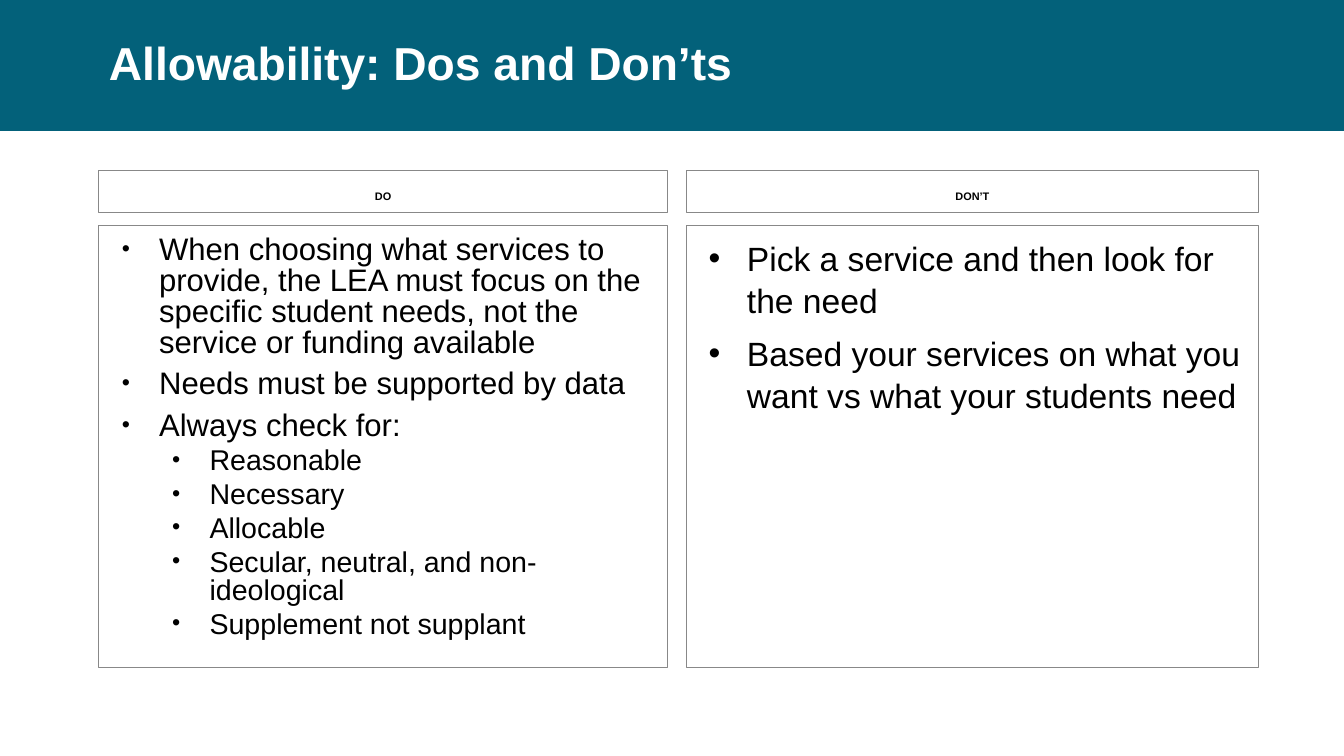
from dataclasses import dataclass

from lxml import etree
from pptx import Presentation
from pptx.dml.color import RGBColor
from pptx.enum.shapes import MSO_SHAPE
from pptx.enum.text import MSO_ANCHOR, MSO_AUTO_SIZE, PP_ALIGN
from pptx.oxml.ns import qn
from pptx.util import Inches, Pt

RECTANGLE = MSO_SHAPE.RECTANGLE
TOP, MIDDLE, BOTTOM = MSO_ANCHOR.TOP, MSO_ANCHOR.MIDDLE, MSO_ANCHOR.BOTTOM
LEFT, CENTER = PP_ALIGN.LEFT, PP_ALIGN.CENTER
NO_FIT = MSO_AUTO_SIZE.NONE
TITLE_ONLY = 5

SLIDE_WIDTH, SLIDE_HEIGHT = Inches(13.33), Inches(7.5)
COLUMN, ROW = SLIDE_WIDTH / 100, SLIDE_HEIGHT / 100
MARGIN = 7.35
BANNER_ROWS = 17.33
HEADING_ROWS = (22.53, 5.6)
LIST_ROWS = (29.87, 58.4)


@dataclass(frozen=True)
class Theme:
    font: str = "Arial"
    teal: RGBColor = RGBColor(0x03, 0x61, 0x7A)
    white: RGBColor = RGBColor(0xFF, 0xFF, 0xFF)
    black: RGBColor = RGBColor(0, 0, 0)
    border: RGBColor = RGBColor(0x88, 0x88, 0x88)
    title_size: float = 33
    heading_size: float = 7.8


THEME = Theme()


@dataclass(frozen=True)
class Level:
    size: float
    indent: float
    hanging: float
    spacing: float
    before: float
    bullet_percent: int


DO_LEVELS = (Level(22.2, 0.5, 0.37, 0.83, 7.5, 75),
             Level(20.4, 1, 0.37, 0.83, 3.8, 82))
DONT_LEVELS = (Level(24, 0.5, 0.38, 1.05, 7.5, 100),)

TOPICS = (
    ("DO", 7.35, 42.31, DO_LEVELS, (
        (0, "When choosing what services to provide, the LEA must focus on "
            "the specific student needs, not the service or funding available"),
        (0, "Needs must be supported by data"),
        (0, "Always check for:"),
        (1, "Reasonable"),
        (1, "Necessary"),
        (1, "Allocable"),
        (1, "Secular, neutral, and non-ideological"),
        (1, "Supplement not supplant"),
    )),
    ("DON’T", 51.09, 42.53, DONT_LEVELS, (
        (0, "Pick a service and then look for the need"),
        (0, "Based your services on what you want vs what your students need"),
    )),
)


def apply(target, formats):
    for name, value in formats.items():
        setattr(target, name, value)


def place(left, top, width, height):
    return [round(length) for length in
            (left * COLUMN, top * ROW, width * COLUMN, height * ROW)]


def format_frame(frame, anchor, inset):
    apply(frame, {
        "word_wrap": True, "auto_size": NO_FIT, "vertical_anchor": anchor,
        "margin_left": Inches(0.1), "margin_right": Inches(0.1),
        "margin_top": Inches(inset), "margin_bottom": Inches(inset)})


def write(paragraph, text, size, color, bold=False, **formats):
    apply(paragraph, formats)
    run = paragraph.add_run()
    run.text = text
    apply(run.font, {"name": THEME.font, "size": Pt(size), "bold": bold})
    run.font.color.rgb = color


def add_bullet(paragraph, level):
    properties = paragraph._p.get_or_add_pPr()
    properties.set("marL", str(Inches(level.indent)))
    properties.set("indent", str(-Inches(level.hanging)))
    color = etree.SubElement(properties, qn("a:buClr"))
    etree.SubElement(color, qn("a:srgbClr"), val=str(THEME.black))
    etree.SubElement(properties, qn("a:buSzPct"),
                     val=str(level.bullet_percent * 1000))
    etree.SubElement(properties, qn("a:buFont"), typeface=THEME.font)
    etree.SubElement(properties, qn("a:buChar"), char="•")


def add_banner(slide):
    banner = slide.shapes.add_shape(RECTANGLE, *place(0, 0, 100, BANNER_ROWS))
    banner.shadow.inherit = False
    banner.fill.solid()
    banner.fill.fore_color.rgb = THEME.teal
    banner.line.fill.background()
    slide.shapes._spTree.insert(2, banner._element)


def set_title(slide, text):
    title = slide.shapes.title
    edges = place(MARGIN, 0, 86.27, BANNER_ROWS)
    apply(title, dict(zip(("left", "top", "width", "height"), edges)))
    format_frame(title.text_frame, MIDDLE, 0.05)
    write(title.text_frame.paragraphs[0], text, THEME.title_size, THEME.white,
          bold=True, alignment=LEFT, line_spacing=0.9)


def add_panel(slide, left, width, rows, anchor):
    top, height = rows
    panel = slide.shapes.add_shape(RECTANGLE, *place(left, top, width, height))
    panel.shadow.inherit = False
    panel.fill.background()
    panel.line.color.rgb = THEME.border
    panel.line.width = Pt(0.75)
    format_frame(panel.text_frame, anchor, 0.1)
    return panel.text_frame


def add_topic(slide, heading, left, width, levels, points):
    header = add_panel(slide, left, width, HEADING_ROWS, BOTTOM)
    write(header.paragraphs[0], heading, THEME.heading_size, THEME.black,
          bold=True, alignment=CENTER, line_spacing=0.83, space_before=Pt(7.5))
    body = add_panel(slide, left, width, LIST_ROWS, TOP)
    for index, (depth, text) in enumerate(points):
        paragraph = body.add_paragraph() if index else body.paragraphs[0]
        level = levels[depth]
        write(paragraph, text, level.size, THEME.black, level=depth,
              alignment=LEFT, line_spacing=level.spacing,
              space_before=Pt(level.before))
        add_bullet(paragraph, level)


def main():
    deck = Presentation()
    apply(deck, {"slide_width": SLIDE_WIDTH, "slide_height": SLIDE_HEIGHT})
    slide = deck.slides.add_slide(deck.slide_layouts[TITLE_ONLY])
    add_banner(slide)
    set_title(slide, "Allowability: Dos and Don’ts")
    for topic in TOPICS:
        add_topic(slide, *topic)
    deck.save("out.pptx")


if __name__ == "__main__":
    main()
